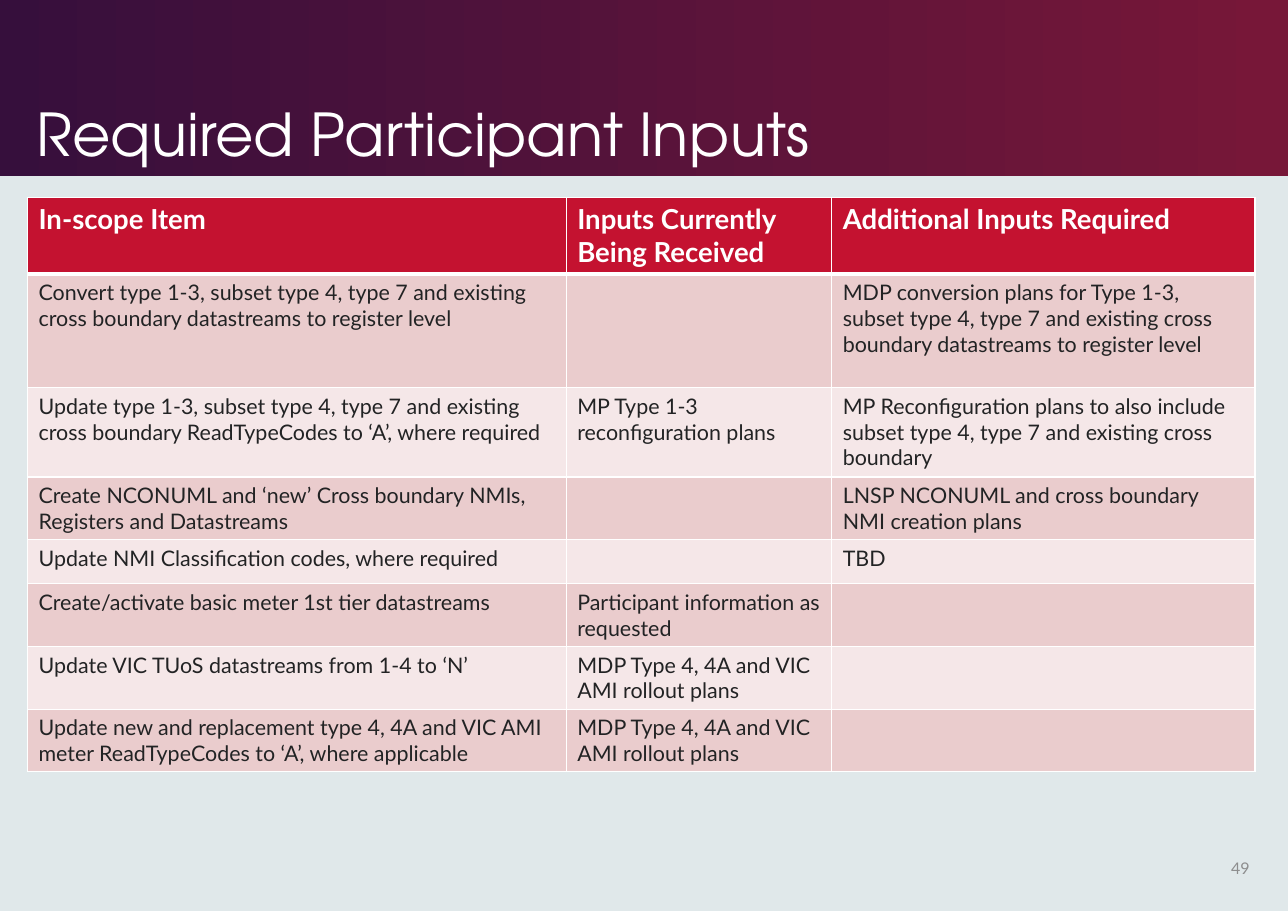
from dataclasses import dataclass

from lxml.etree import SubElement
from pptx import Presentation
from pptx.dml.color import RGBColor
from pptx.enum.shapes import MSO_SHAPE
from pptx.enum.text import MSO_ANCHOR, PP_ALIGN
from pptx.oxml.ns import qn
from pptx.util import Inches, Pt


@dataclass(frozen=True)
class Theme:
    back: str = "E0E8EA"
    dark: str = "360F3C"
    wine: str = "771738"
    white: str = "FFFFFF"
    red: str = "C41230"
    rose: str = "EACCCD"
    pale: str = "F5E7E8"
    ink: str = "222324"
    grey: str = "8D8D8E"
    sans: str = "Lato"
    display: str = "TeX Gyre Adventor"
    title: float = 38.6
    head: float = 18
    body: float = 14
    small: float = 10.5


THEME = Theme()
WIDTH, HEIGHT = 11.69, 8.27
COLS = [4.89, 2.41, 3.84]
ROWS = [
    (0.70, "In-scope Item", "Inputs Currently Being Received",
     "Additional Inputs Required"),
    (1.03, "Convert type 1-3, subset type 4, type 7 and existing cross boundary "
     "datastreams to register level", "",
     "MDP conversion plans for Type 1-3, subset type 4, type 7 and existing cross "
     "boundary datastreams to register level"),
    (0.81, "Update type 1-3, subset type 4, type 7 and existing cross boundary "
     "ReadTypeCodes to ‘A’, where required", "MP Type 1-3 reconfiguration plans",
     "MP Reconfiguration plans to also include subset type 4, type 7 and existing "
     "cross boundary"),
    (0.57, "Create NCONUML and ‘new’ Cross boundary NMIs, Registers and Datastreams",
     "", "LNSP NCONUML and cross boundary NMI creation plans"),
    (0.40, "Update NMI Classification codes, where required", "", "TBD"),
    (0.57, "Create/activate basic meter 1st tier datastreams",
     "Participant information as requested", ""),
    (0.57, "Update VIC TUoS datastreams from 1-4 to ‘N’",
     "MDP Type 4, 4A and VIC AMI rollout plans", ""),
    (0.56, "Update new and replacement type 4, 4A and VIC AMI meter ReadTypeCodes "
     "to ‘A’, where applicable", "MDP Type 4, 4A and VIC AMI rollout plans", ""),
]


def color(code):
    return RGBColor.from_string(code)


def write(frame, text, size=THEME.body, ink=THEME.ink, face=THEME.sans,
          bold=False, align=PP_ALIGN.LEFT, anchor=MSO_ANCHOR.TOP, lead=1.0):
    frame.word_wrap = True
    frame.vertical_anchor = anchor
    para = frame.paragraphs[0]
    para.alignment, para.line_spacing = align, lead
    para.font.size = Pt(size)
    if text:
        run = para.add_run()
        run.text = text
        font = run.font
        font.size, font.name, font.bold = Pt(size), face, bold
        font.color.rgb = color(ink)


def label(slide, box, text, **style):
    shape = slide.shapes.add_textbox(*map(Inches, box))
    write(shape.text_frame, text, **style)


def border(cell, **widths):
    props = cell._tc.get_or_add_tcPr()
    for place, side in enumerate("LRTB"):
        line = SubElement(props, qn(f"a:ln{side}"), w=str(Pt(widths.get(side, 1))))
        fill = SubElement(line, qn("a:solidFill"))
        SubElement(fill, qn("a:srgbClr"), val=THEME.white)
        props.insert(place, line)


def banner(slide, box, title):
    left, top, width, height = box
    band = slide.shapes.add_shape(MSO_SHAPE.RECTANGLE, *map(Inches, box))
    band.shadow.inherit = False
    band.line.fill.background()
    band.fill.gradient()
    band.fill.gradient_angle = 0
    first, last = band.fill.gradient_stops
    first.color.rgb, last.color.rgb = color(THEME.dark), color(THEME.wine)
    first.position, last.position = 0, 0.99
    label(slide, (left + 0.23, top + 0.16, width - 1.8, height - 0.17), title,
          size=THEME.title, ink=THEME.white, face=THEME.display,
          anchor=MSO_ANCHOR.BOTTOM, lead=0.9)


def grid(slide, box):
    table = slide.shapes.add_table(len(ROWS), len(COLS), *map(Inches, box)).table
    for col, width in zip(table.columns, COLS):
        col.width = Inches(width)
    for r, (height, *texts) in enumerate(ROWS):
        table.rows[r].height = Inches(height)
        # Red header, then alternating bands
        if r == 0:
            back, edges = THEME.red, {"B": 3}
            style = dict(size=THEME.head, ink=THEME.white, bold=True)
        else:
            back = THEME.rose if r % 2 else THEME.pale
            edges = {"T": 3} if r == 1 else {}
            style = {}
        for c, text in enumerate(texts):
            cell = table.cell(r, c)
            cell.fill.solid()
            cell.fill.fore_color.rgb = color(back)
            border(cell, **edges)
            write(cell.text_frame, text, **style)


def footer(slide, box, number):
    label(slide, box, number, size=THEME.small, ink=THEME.grey,
          align=PP_ALIGN.RIGHT, anchor=MSO_ANCHOR.MIDDLE)


def main():
    deck = Presentation()
    deck.slide_width, deck.slide_height = Inches(WIDTH), Inches(HEIGHT)
    slide = deck.slides.add_slide(deck.slide_layouts[6])
    slide.background.fill.solid()
    slide.background.fill.fore_color.rgb = color(THEME.back)

    # Title band, inputs table, page number
    banner(slide, (0, 0, WIDTH, 1.6), "Required Participant Inputs")
    grid(slide, (0.25, 1.79, sum(COLS), sum(row[0] for row in ROWS)))
    footer(slide, (10.89, 7.66, 0.55, 0.44), "49")
    deck.save("out.pptx")


if __name__ == "__main__":
    main()
